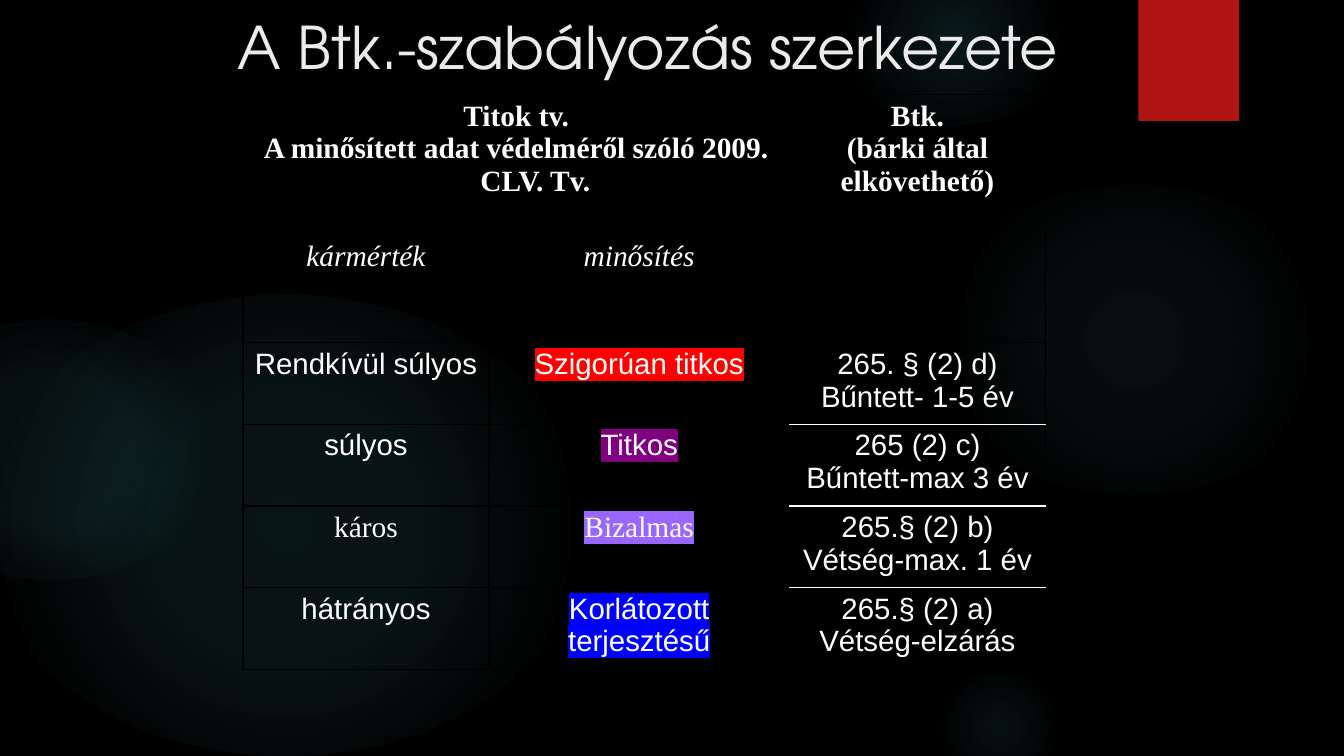
"""Builds the slide on the structure of the Hungarian classified-data rules."""
from dataclasses import dataclass, field
from typing import Optional

from lxml.etree import SubElement
from pptx import Presentation
from pptx.dml.color import RGBColor
from pptx.enum.shapes import MSO_SHAPE
from pptx.enum.text import MSO_ANCHOR, PP_ALIGN
from pptx.oxml import parse_xml
from pptx.oxml.ns import nsdecls, qn
from pptx.util import Inches, Pt


@dataclass(frozen=True)
class Theme:
    background: str = "000000"
    glow: str = "50B9C1"
    accent: str = "B01513"
    title: str = "EBEBEB"
    text: str = "FFFFFF"
    grid: str = "000000"
    divider: str = "FFFFFF"
    title_font: str = "TeX Gyre Adventor"
    serif: str = "Times New Roman"
    sans: str = "Arial"
    title_size: int = 42
    table_size: int = 21
    grid_width: int = 1
    indent: float = 0.38


THEME = Theme()


@dataclass(frozen=True)
class Glow:
    left: float
    top: float
    width: float
    height: float
    stops: tuple[tuple[int, int], ...]


@dataclass(frozen=True)
class Entry:
    lines: tuple[str, ...]
    name: str = THEME.sans
    highlight: Optional[str] = None
    formats: dict = field(default_factory=dict)


GLOWS = (
    Glow(9.19, 1.83, 4.11, 3.08, ((0, 7), (36, 6), (69, 0))),
    Glow(8.3, -0.5, 2.33, 1.75, ((0, 14), (36, 7), (73, 0))),
    Glow(9.19, 6.67, 1.44, 1.08, ((0, 9), (36, 5), (66, 0))),
    Glow(-0.22, 2.92, 6.11, 4.58, ((0, 11), (36, 10), (75, 0))),
    Glow(-1.22, 3.17, 3.44, 2.58, ((0, 8), (36, 8), (72, 0))),
)
BOLD = {"bold": True}
ITALIC = {"bold": False, "italic": True}
COLUMN_WIDTHS = (2.44, 2.98, 2.54)
ROW_HEIGHTS = (1.39, 1.06) + (0.81,) * 4
ROWS = (
    (
        Entry(("Titok tv.", "A minősített adat védelméről szóló 2009. CLV. Tv."), THEME.serif, formats=BOLD),
        None,
        Entry(("Btk.", "(bárki által", "elkövethető)"), THEME.serif, formats=BOLD),
    ),
    (
        Entry(("kármérték",), THEME.serif, formats=ITALIC),
        Entry(("minősítés",), THEME.serif, formats=ITALIC),
        None,
    ),
    (
        Entry(("Rendkívül súlyos",)),
        Entry(("Szigorúan titkos",), highlight="FF0000"),
        Entry(("265. § (2) d)", "Bűntett- 1-5 év")),
    ),
    (
        Entry(("súlyos",)),
        Entry(("Titkos",), highlight="800080"),
        Entry(("265 (2) c)", "Bűntett-max 3 év")),
    ),
    (
        Entry(("káros",), THEME.serif),
        Entry(("Bizalmas",), THEME.serif, "9966FF"),
        Entry(("265.§ (2) b)", "Vétség-max. 1 év")),
    ),
    (
        Entry(("hátrányos",)),
        Entry(("Korlátozott", "terjesztésű"), highlight="0000FF"),
        Entry(("265.§ (2) a)", "Vétség-elzárás")),
    ),
)


def add_plain_shape(page, kind, left: float, top: float, width: float, height: float):
    shape = page.shapes.add_shape(kind, Inches(left), Inches(top), Inches(width), Inches(height))
    shape.shadow.inherit = False
    shape.line.fill.background()
    return shape


def add_glow(page, glow: Glow) -> None:
    shape = add_plain_shape(page, MSO_SHAPE.OVAL, glow.left, glow.top, glow.width, glow.height)
    stops = "".join(
        f'<a:gs pos="{place * 1000}"><a:srgbClr val="{THEME.glow}">'
        f'<a:alpha val="{alpha * 1000}"/></a:srgbClr></a:gs>'
        for place, alpha in glow.stops
    )
    gradient = parse_xml(
        f'<a:gradFill {nsdecls("a")} rotWithShape="1"><a:gsLst>{stops}</a:gsLst><a:path path="circle">'
        '<a:fillToRect l="50000" t="50000" r="50000" b="50000"/></a:path></a:gradFill>'
    )
    shape.element.spPr.find(qn("a:prstGeom")).addnext(gradient)


def set_font(font, color: str, formats: dict) -> None:
    font.color.rgb = RGBColor.from_string(color)
    for key, value in formats.items():
        setattr(font, key, value)


def add_title(page, text: str) -> None:
    title = page.shapes.title
    title.element.getparent().append(title.element)
    place = {"left": 2.26, "top": 0, "width": 8.91, "height": 0.91}
    for key, value in place.items():
        setattr(title, key, Inches(value))
    frame = title.text_frame
    frame.text = text
    frame.word_wrap = True
    frame.vertical_anchor = MSO_ANCHOR.MIDDLE
    para = frame.paragraphs[0]
    para.alignment = PP_ALIGN.LEFT
    set_font(para.runs[0].font, THEME.title, {"size": Pt(THEME.title_size), "name": THEME.title_font})


def set_borders(cell, top: str, bottom: str) -> None:
    properties = cell._tc.get_or_add_tcPr()
    colors = {"lnL": THEME.grid, "lnR": THEME.grid, "lnT": top, "lnB": bottom}
    for side, color in colors.items():
        line = SubElement(properties, qn(f"a:{side}"), w=str(Pt(THEME.grid_width)))
        SubElement(SubElement(line, qn("a:solidFill")), qn("a:srgbClr"), val=color)
    cell.fill.background()


def fill_cell(cell, entry: Entry) -> None:
    frame = cell.text_frame
    for index, text in enumerate(entry.lines):
        para = frame.paragraphs[0] if index == 0 else frame.add_paragraph()
        para.alignment = PP_ALIGN.CENTER
        properties = para._p.get_or_add_pPr()
        properties.set("marL", str(Inches(THEME.indent)))
        properties.set("indent", str(-Inches(THEME.indent)))
        span = para.add_run()
        span.text = text
        formats = {"size": Pt(THEME.table_size), "name": entry.name, **entry.formats}
        set_font(span.font, THEME.text, formats)
        if entry.highlight:
            mark = parse_xml(
                f'<a:highlight {nsdecls("a")}><a:srgbClr val="{entry.highlight}"/></a:highlight>'
            )
            span._r.rPr.find(qn("a:solidFill")).addnext(mark)


def add_rules_table(page) -> None:
    frame = page.shapes.add_table(
        len(ROWS), len(COLUMN_WIDTHS), Inches(2.41), Inches(0.94),
        Inches(sum(COLUMN_WIDTHS)), Inches(sum(ROW_HEIGHTS)),
    )
    table = frame.table
    table.first_row = table.horz_banding = False
    for column, width in zip(table.columns, COLUMN_WIDTHS):
        column.width = Inches(width)
    for row, height in zip(table.rows, ROW_HEIGHTS):
        row.height = Inches(height)
    table.cell(0, 0).merge(table.cell(0, 1))
    table.cell(0, 2).merge(table.cell(1, 2))
    for row, entries in enumerate(ROWS):
        for column, entry in enumerate(entries):
            cell = table.cell(row, column)
            penalty = column == 2
            top = THEME.divider if penalty and row > 2 else THEME.grid
            bottom = THEME.divider if penalty and 2 <= row < len(ROWS) - 1 else THEME.grid
            set_borders(cell, top, bottom)
            if entry:
                fill_cell(cell, entry)


def main() -> None:
    deck = Presentation()
    deck.slide_width, deck.slide_height = Inches(13.33), Inches(7.5)
    page = deck.slides.add_slide(deck.slide_layouts[5])
    page.background.fill.solid()
    page.background.fill.fore_color.rgb = RGBColor.from_string(THEME.background)
    for glow in GLOWS:
        add_glow(page, glow)
    ribbon = add_plain_shape(page, MSO_SHAPE.RECTANGLE, 11.29, 0, 1, 1.2)
    ribbon.fill.solid()
    ribbon.fill.fore_color.rgb = RGBColor.from_string(THEME.accent)
    add_rules_table(page)
    add_title(page, "A Btk.-szabályozás szerkezete")
    deck.save("out.pptx")


if __name__ == "__main__":
    main()
